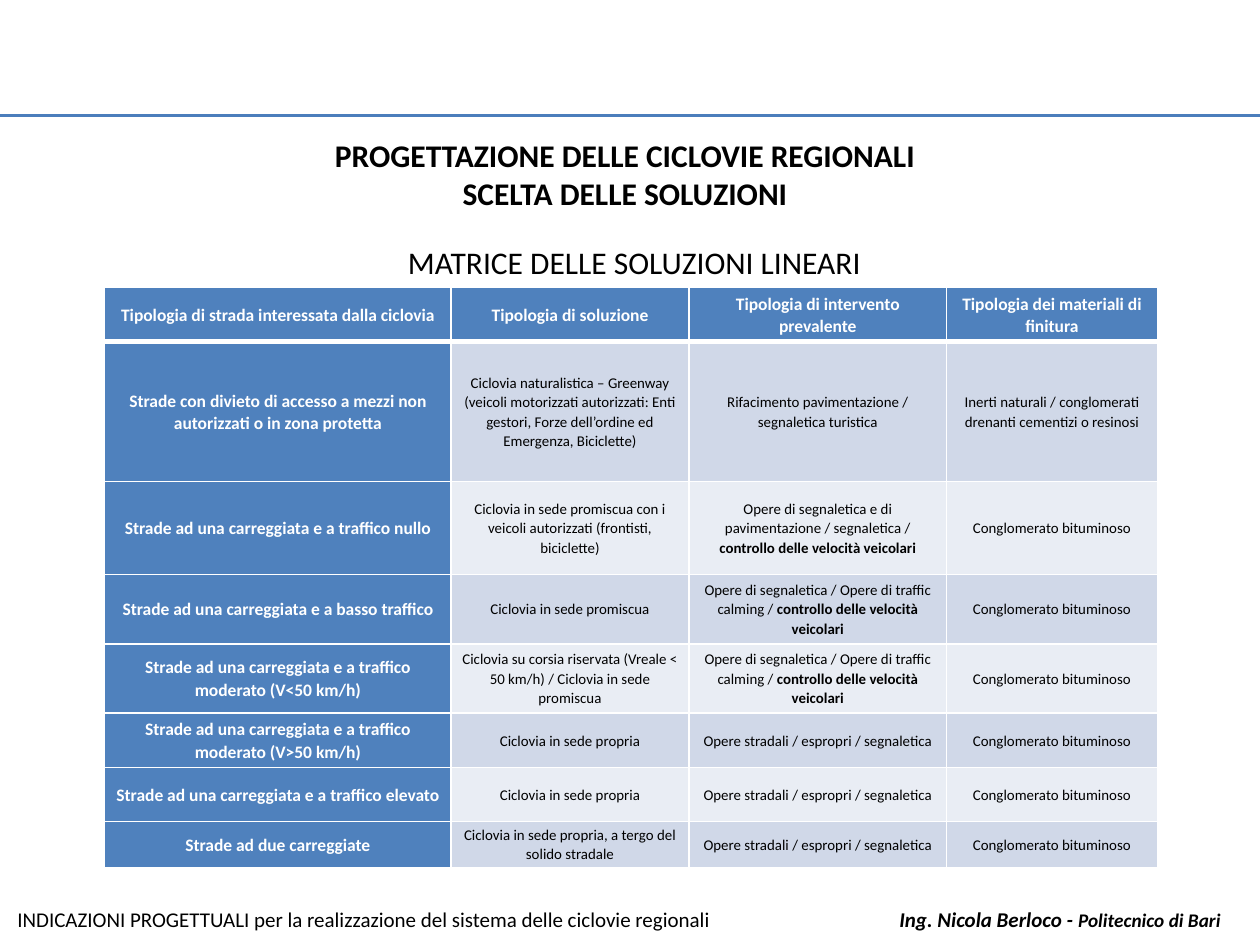
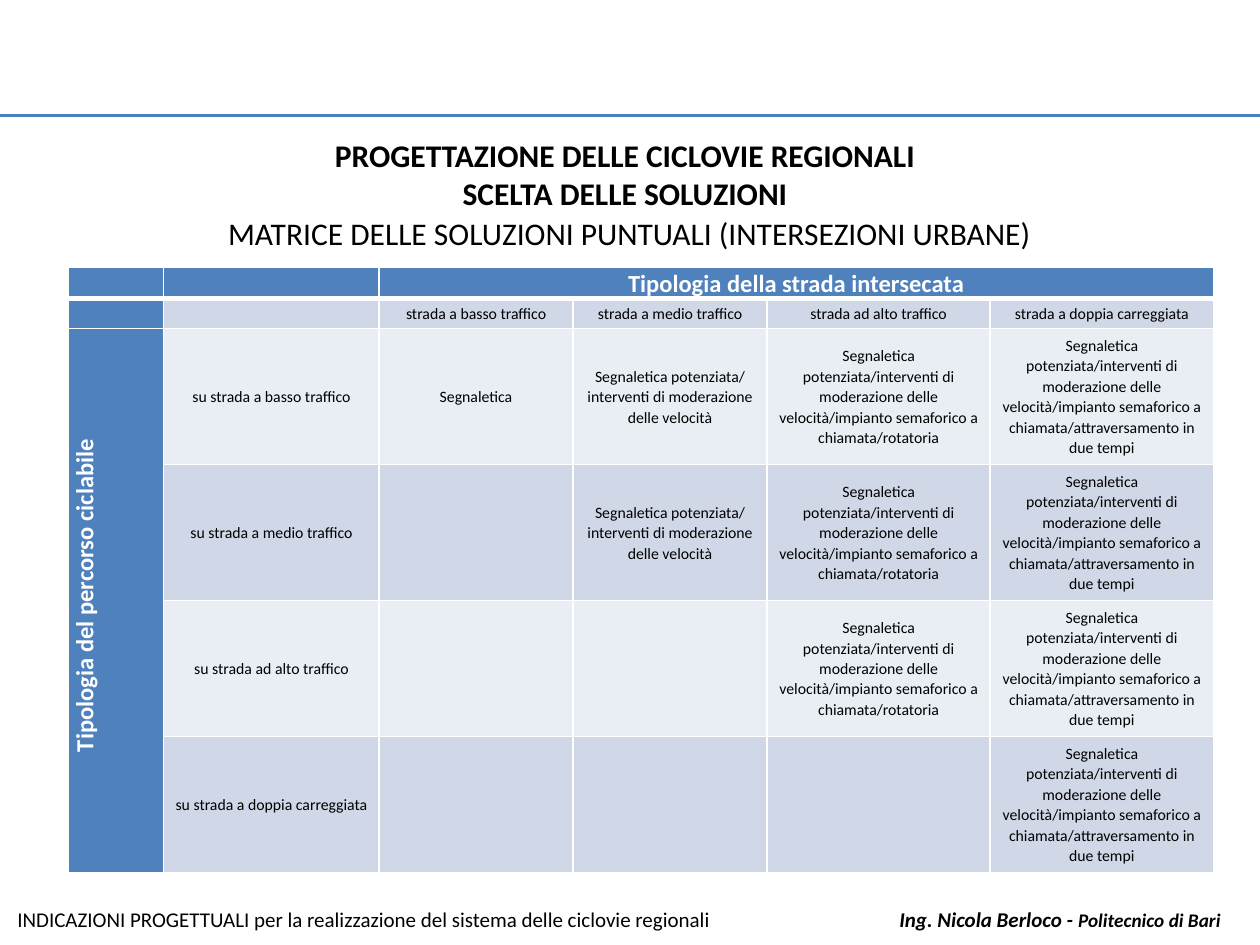
from dataclasses import dataclass

import lxml.etree
import pptx
import pptx.dml.color
import pptx.enum.shapes
import pptx.enum.text
import pptx.oxml.ns
import pptx.util
from pptx.util import Cm, Pt

qn = pptx.oxml.ns.qn
ALIGN = pptx.enum.text.PP_ALIGN
MIDDLE = pptx.enum.text.MSO_ANCHOR.MIDDLE
TOP = pptx.enum.text.MSO_ANCHOR.TOP


@dataclass(frozen=True)
class Theme:
    font: str = "Calibri"
    black: str = "000000"
    white: str = "FFFFFF"
    rule: str = "4B7EBC"
    header: str = "4F81BD"
    bands: tuple = ("D0D8E8", "E9EDF4")
    title_size: float = 18
    footer_size: float = 12
    school_size: float = 11


theme = Theme()


def write(paragraph, pieces, color=theme.black, align=ALIGN.CENTER):
    """Fill a paragraph with (text, size, bold, italic) pieces."""
    paragraph.alignment = align
    for text, size, bold, italic in pieces:
        run = paragraph.add_run()
        run.text = text
        run.font.name = theme.font
        run.font.size = Pt(size)
        run.font.bold = bold
        run.font.italic = italic
        run.font.color.rgb = pptx.dml.color.RGBColor.from_string(color)


def add_matrix(slide, left, top, widths, heights, rows, margin, head_size, body_size):
    """Draw a banded matrix with blue first row and column; '|' starts bold text."""
    table = slide.shapes.add_table(len(rows), len(widths), Cm(left), Cm(top),
                                   Cm(sum(widths)), Cm(sum(heights))).table
    table.first_row = table.horz_banding = False
    for column, width in zip(table.columns, widths):
        column.width = Cm(width)
    for row, height in zip(table.rows, heights):
        row.height = Cm(height)
    for r, row in enumerate(rows):
        for c, text in enumerate(row):
            cell = table.cell(r, c)
            heading = r == 0 or c == 0
            size = head_size if heading else body_size
            cell.margin_left = cell.margin_right = Cm(margin)
            cell.margin_top = cell.margin_bottom = 0
            cell.vertical_anchor = MIDDLE

            # White borders, thicker under the header row
            properties = cell._tc.get_or_add_tcPr()
            for side in ("lnL", "lnR", "lnT", "lnB"):
                thick = (r, side) in ((0, "lnB"), (1, "lnT"))
                line = lxml.etree.SubElement(properties, qn("a:" + side), w=str(Pt(3 if thick else 1)))
                fill = lxml.etree.SubElement(line, qn("a:solidFill"))
                lxml.etree.SubElement(fill, qn("a:srgbClr"), val=theme.white)
            cell.fill.solid()
            cell.fill.fore_color.rgb = pptx.dml.color.RGBColor.from_string(
                theme.header if heading else theme.bands[(r - 1) % 2])

            paragraph = cell.text_frame.paragraphs[0]
            if text:
                paragraph.line_spacing = 1.07
                paragraph.space_after = Pt(8)
                plain, _, strong = text.partition("|")
                pieces = [(plain, size, heading, False)]
                if strong:
                    pieces.append((strong, size, True, False))
                write(paragraph, pieces, theme.white if heading else theme.black)
            else:
                # Keep empty cells from stretching their row
                lxml.etree.SubElement(paragraph._p, qn("a:endParaRPr"), sz=str(int(body_size * 100)))
    return table


deck = pptx.Presentation()
deck.slide_width = Cm(25.4)
deck.slide_height = Cm(19.05)

# Frame shared by both slides: rule, title, subtitle, footer
title_lines = ["PROGETTAZIONE DELLE CICLOVIE REGIONALI", "SCELTA DELLE SOLUZIONI"]
subtitles = [
    ("MATRICE DELLE SOLUZIONI LINEARI", 1.09, 4.78),
    ("MATRICE DELLE SOLUZIONI PUNTUALI (INTERSEZIONI URBANE)", 0.99, 4.19),
]
footer = [
    ("INDICAZIONI PROGETTUALI per la realizzazione del sistema delle ciclovie regionali\t",
     theme.footer_size, False, False),
    ("Ing. Nicola Berloco - ", theme.footer_size, True, True),
    ("Politecnico di Bari", theme.school_size, True, True),
]
slides = []
for subtitle, subtitle_left, subtitle_top in subtitles:
    slide = deck.slides.add_slide(deck.slide_layouts[6])
    slides.append(slide)

    rule = slide.shapes.add_connector(pptx.enum.shapes.MSO_CONNECTOR.STRAIGHT,
                                      0, Cm(2.33), deck.slide_width, Cm(2.33))
    rule.line.color.rgb = pptx.dml.color.RGBColor.from_string(theme.rule)
    rule.line.width = Pt(1.5)
    lxml.etree.SubElement(rule._element.spPr, qn("a:effectLst"))

    captions = [
        (0.1, 2.62, 25, 1.8, [[(line, theme.title_size, True, False)] for line in title_lines], ALIGN.CENTER),
        (subtitle_left, subtitle_top, 23.4, 1.02, [[(subtitle, theme.title_size, False, False)]], ALIGN.CENTER),
        (0.1, 18.16, 25, 0.76, [footer], ALIGN.LEFT),
    ]
    for left, top, width, height, lines, align in captions:
        frame = slide.shapes.add_textbox(Cm(left), Cm(top), Cm(width), Cm(height)).text_frame
        frame.word_wrap = True
        frame.auto_size = pptx.enum.text.MSO_AUTO_SIZE.SHAPE_TO_FIT_TEXT
        for i, pieces in enumerate(lines):
            paragraph = frame.paragraphs[0] if i == 0 else frame.add_paragraph()
            if pieces is footer:
                tabs = lxml.etree.SubElement(paragraph._p.get_or_add_pPr(), qn("a:tabLst"))
                lxml.etree.SubElement(tabs, qn("a:tab"), pos=str(Cm(17.78)), algn="l")
            write(paragraph, pieces, align=align)

linear_slide, crossing_slide = slides

# Slide 1: linear solutions by type of road
asphalt = "Conglomerato bituminoso"
own_lane = "Ciclovia in sede propria"
road_works = "Opere stradali / espropri / segnaletica"
calming = "Opere di segnaletica / Opere di traffic calming / |controllo delle velocità veicolari"
linear_solutions = [
    ["Tipologia di strada interessata dalla ciclovia", "Tipologia di soluzione",
     "Tipologia di intervento prevalente", "Tipologia dei materiali di finitura"],
    ["Strade con divieto di accesso a mezzi non autorizzati o in zona protetta",
     "Ciclovia naturalistica – Greenway (veicoli motorizzati autorizzati: Enti gestori, "
     "Forze dell’ordine ed Emergenza, Biciclette)",
     "Rifacimento pavimentazione / segnaletica turistica",
     "Inerti naturali / conglomerati drenanti cementizi o resinosi"],
    ["Strade ad una carreggiata e a traffico nullo",
     "Ciclovia in sede promiscua con i veicoli autorizzati (frontisti, biciclette)",
     "Opere di segnaletica e di pavimentazione / segnaletica / |controllo delle velocità veicolari",
     asphalt],
    ["Strade ad una carreggiata e a basso traffico", "Ciclovia in sede promiscua", calming, asphalt],
    ["Strade ad una carreggiata e a traffico moderato (V<50 km/h)",
     "Ciclovia su corsia riservata (Vreale < 50 km/h) / Ciclovia in sede promiscua", calming, asphalt],
    ["Strade ad una carreggiata e a traffico moderato (V>50 km/h)", own_lane, road_works, asphalt],
    ["Strade ad una carreggiata e a traffico elevato", own_lane, road_works, asphalt],
    ["Strade ad due carreggiate", own_lane + ", a tergo del solido stradale", road_works, asphalt],
]
add_matrix(linear_slide, 2.11, 5.8, [6.98, 4.8, 5.19, 4.25],
           [1.09, 2.82, 1.87, 1.4, 1.4, 1.09, 1.09, 0.93],
           linear_solutions, 0.18, head_size=10, body_size=8.5)

# Slide 2: crossing solutions, by cycle route (rows) and crossed road (columns)
traffic = ["a basso traffico", "a medio traffico", "ad alto traffico", "a doppia carreggiata"]
measures = "interventi di moderazione delle velocità"
signals = f"Segnaletica potenziata/{measures}/impianto semaforico a chiamata/"
crossing_solutions = ["Segnaletica", f"Segnaletica potenziata/ {measures}",
                      signals + "rotatoria", signals + "attraversamento in due tempi"]
crossings = [
    ["", "", "Tipologia della strada intersecata", "", "", ""],
    ["", ""] + [f"strada {level}" for level in traffic],
]
for i, level in enumerate(traffic):
    route = "Tipologia del percorso ciclabile" if i == 0 else ""
    crossings.append([route, f"su strada {level}"] + [""] * i + crossing_solutions[i:])
crossing_table = add_matrix(crossing_slide, 1.37, 5.38, [1.93, 4.34, 3.91, 3.91, 4.5, 4.5],
                            [0.51, 0.61] + [2.74] * 4,
                            crossings, 0.15, head_size=14, body_size=9)
crossing_table.cell(0, 2).merge(crossing_table.cell(0, 5))
route_cell = crossing_table.cell(2, 0)
route_cell.merge(crossing_table.cell(5, 0))
route_cell.vertical_anchor = TOP
route_cell._tc.get_or_add_tcPr().set("vert", "vert270")
route_cell.text_frame.paragraphs[0]._p.get_or_add_pPr().set("marL", str(Cm(0.2)))

deck.save("out.pptx")
